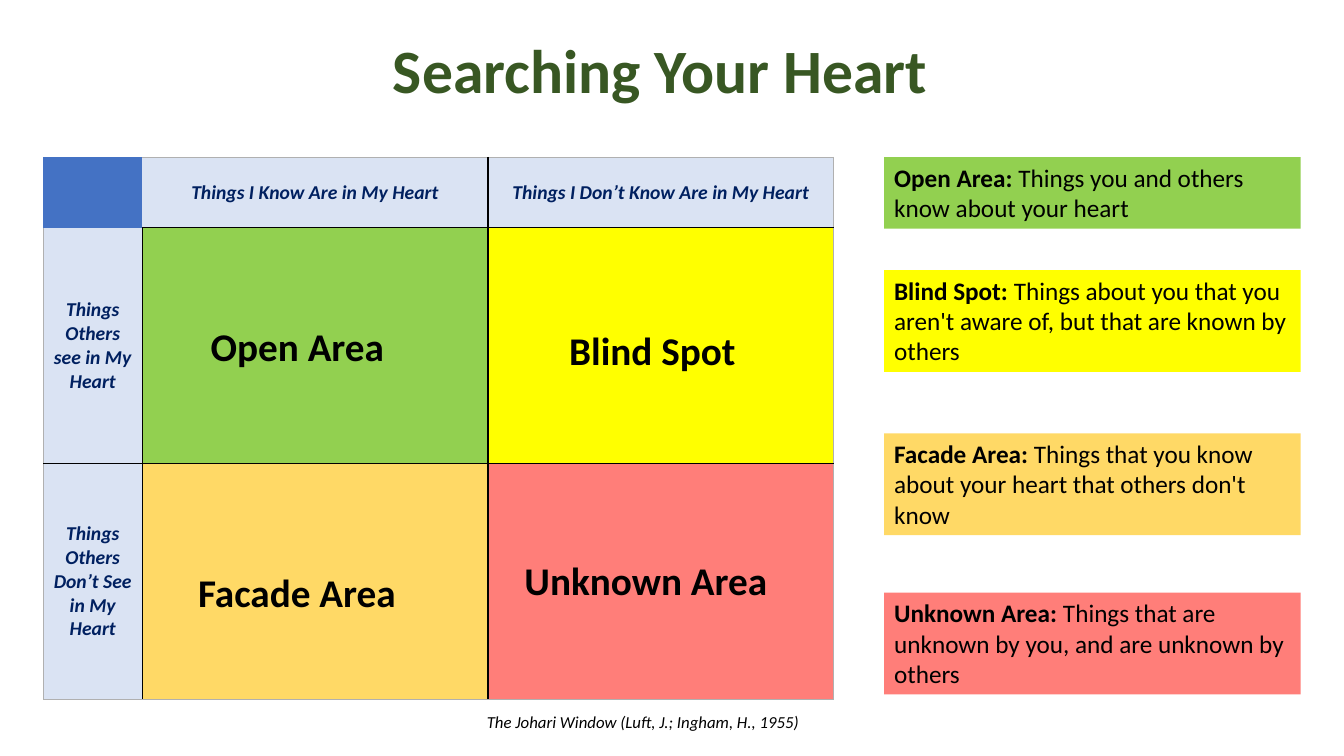
from lxml import etree
from pptx import Presentation
from pptx.dml.color import RGBColor
from pptx.enum import shapes, text
from pptx.oxml import ns
from pptx.util import Inches, Pt

BLACK = RGBColor(0x00, 0x00, 0x00)
GRAY = RGBColor(0xB0, 0xB0, 0xB0)
DARK_GREEN = RGBColor(0x38, 0x57, 0x23)
NAVY = RGBColor(0x00, 0x20, 0x60)
BLUE = RGBColor(0x44, 0x72, 0xC4)
PALE_BLUE = RGBColor(0xDA, 0xE3, 0xF3)
GREEN = RGBColor(0x92, 0xD0, 0x50)
YELLOW = RGBColor(0xFF, 0xFF, 0x00)
GOLD = RGBColor(0xFF, 0xD9, 0x66)
CORAL = RGBColor(0xFF, 0x7E, 0x79)

TITLE = dict(size=Pt(44), bold=True)
HEADING = dict(size=Pt(14), bold=True, italic=True)
AREA = dict(size=Pt(28), bold=True)
TERM = dict(size=Pt(18), bold=True)
MEANING = dict(size=Pt(18), bold=False)
SOURCE = dict(size=Pt(12), italic=True)

CENTER = text.PP_ALIGN.CENTER
LEFT = text.PP_ALIGN.LEFT
MIDDLE = text.MSO_ANCHOR.MIDDLE
TOP = text.MSO_ANCHOR.TOP
FIT = text.MSO_AUTO_SIZE.SHAPE_TO_FIT_TEXT

WINDOW = [
    [([], BLUE), (["Things I Know Are in My Heart"], PALE_BLUE),
     (["Things I Don’t Know Are in My Heart"], PALE_BLUE)],
    [(["Things Others see in My Heart"], PALE_BLUE), ([], GREEN), ([], YELLOW)],
    [(["Things Others", "Don’t See in My Heart"], PALE_BLUE), ([], GOLD), ([], CORAL)],
]
COLUMN_WIDTHS = [0.98, 3.43, 3.43]
ROW_HEIGHTS = [0.7, 2.34, 2.34]

DEFINITIONS = [
    ("Open Area: ", "Things you and others know about your heart", 1.56, 0.71, GREEN),
    ("Blind Spot: ", "Things about you that you aren't aware of, but that are known by others",
     2.68, 1.01, YELLOW),
    ("Facade Area: ", "Things that you know about your heart that others don't know",
     4.3, 1.01, GOLD),
    ("Unknown Area: ", "Things that are unknown by you, and are unknown by others",
     5.88, 1.01, CORAL),
]

AREAS = [
    ("Open Area", 1.98, 3.15, 1.94),
    ("Blind Spot", 5.47, 3.19, 2.0),
    ("Unknown Area", 5.03, 5.47, 2.75),
    ("Facade Area", 1.76, 5.59, 2.37),
]


def add_run(paragraph, wording, style, color=BLACK):
    run = paragraph.add_run()
    run.text = wording
    run.font.name = "Calibri"
    for name, value in style.items():
        setattr(run.font, name, value)
    run.font.color.rgb = color


def add_label(slide, wording, box, style, color=BLACK, align=CENTER, **frame_format):
    frame = slide.shapes.add_textbox(*map(Inches, box)).text_frame
    for name, value in {"word_wrap": True, **frame_format}.items():
        setattr(frame, name, value)
    line = frame.paragraphs[0]
    line.alignment = align
    add_run(line, wording, style, color)
    return line


def add_definition(slide, term, meaning, top, height, color):
    panel = slide.shapes.add_shape(
        shapes.MSO_SHAPE.RECTANGLE, *map(Inches, (8.77, top, 4.13, height)))
    panel.shadow.inherit = False
    panel.fill.solid()
    panel.fill.fore_color.rgb = color
    panel.line.fill.background()
    frame = panel.text_frame
    for name, value in dict(word_wrap=True, vertical_anchor=TOP, auto_size=FIT).items():
        setattr(frame, name, value)
    line = frame.paragraphs[0]
    line.alignment = LEFT
    add_run(line, term, TERM)
    add_run(line, meaning, MEANING)


def set_border(cell, side, color, width):
    border = etree.SubElement(
        cell._tc.get_or_add_tcPr(), ns.qn(f"a:ln{side}"), w=str(Pt(width)))
    if color is None:
        etree.SubElement(border, ns.qn("a:noFill"))
    else:
        fill = etree.SubElement(border, ns.qn("a:solidFill"))
        etree.SubElement(fill, ns.qn("a:srgbClr"), val=str(color))


def set_borders(cell, row, column):
    outer = {"L": column == 0, "R": column == 2, "T": row == 0, "B": row == 2}
    beside_corner = {"L": (row, column) == (0, 1), "T": (row, column) == (1, 0)}
    for side, is_outer in outer.items():
        if row == column == 0 or beside_corner.get(side):
            set_border(cell, side, None, 1)
        elif is_outer:
            set_border(cell, side, GRAY, 0.5)
        else:
            set_border(cell, side, BLACK, 1)


def add_window(slide):
    window = slide.shapes.add_table(
        3, 3, *map(Inches, (0.43, 1.56, sum(COLUMN_WIDTHS), sum(ROW_HEIGHTS)))).table
    window.first_row = False
    window.horz_banding = False
    for column, width in zip(window.columns, COLUMN_WIDTHS):
        column.width = Inches(width)
    for row, height in zip(window.rows, ROW_HEIGHTS):
        row.height = Inches(height)
    for r, entries in enumerate(WINDOW):
        for c, (lines, color) in enumerate(entries):
            cell = window.cell(r, c)
            set_borders(cell, r, c)
            cell.fill.solid()
            cell.fill.fore_color.rgb = color
            cell.vertical_anchor = MIDDLE
            for i, wording in enumerate(lines):
                frame = cell.text_frame
                line = frame.add_paragraph() if i else frame.paragraphs[0]
                line.alignment = CENTER
                add_run(line, wording, HEADING, NAVY)


def main():
    deck = Presentation()
    deck.slide_width = Inches(13.33)
    deck.slide_height = Inches(7.5)
    slide = deck.slides.add_slide(deck.slide_layouts[6])
    title = add_label(slide, "Searching Your Heart", (0.8, 0, 11.5, 1.45), TITLE,
                      DARK_GREEN, vertical_anchor=MIDDLE)
    title.line_spacing = 0.9
    add_window(slide)
    for definition in DEFINITIONS:
        add_definition(slide, *definition)
    for wording, left, top, width in AREAS:
        add_label(slide, wording, (left, top, width, 0.57), AREA, auto_size=FIT)
    add_label(slide, "The Johari Window (Luft, J.; Ingham, H., 1955)",
              (4.73, 7.01, 3.34, 0.3), SOURCE, align=LEFT, word_wrap=False, auto_size=FIT)
    deck.save("out.pptx")


if __name__ == "__main__":
    main()
